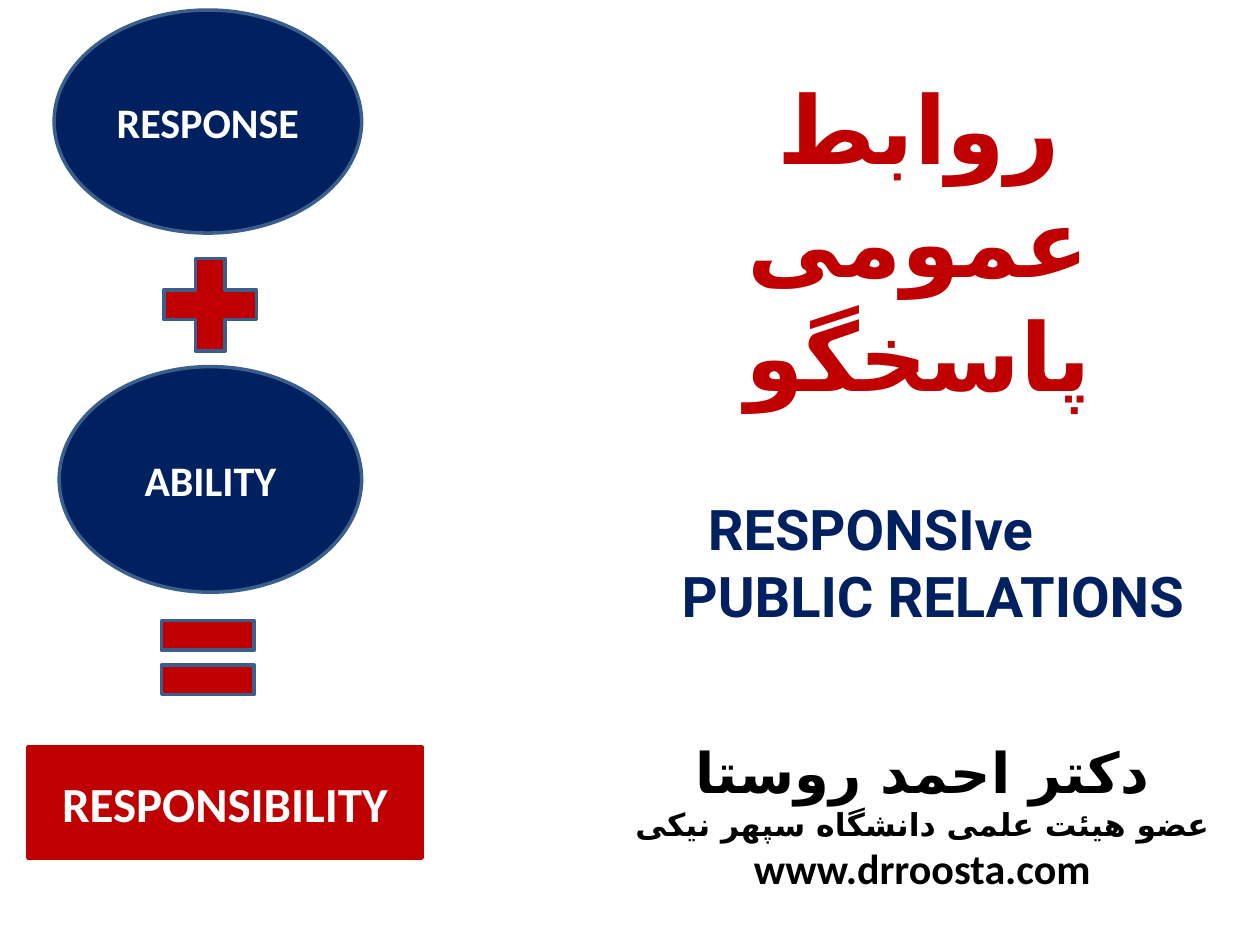
from dataclasses import dataclass

from lxml import etree
from pptx import Presentation
from pptx.dml.color import RGBColor
from pptx.enum import shapes, text
from pptx.oxml.ns import qn
from pptx.util import Inches, Pt


@dataclass(frozen=True)
class Theme:
    navy: str = "002060"
    red: str = "C00000"
    outline: str = "3A5F8C"
    white: str = "FFFFFF"
    black: str = "000000"
    body: str = "Calibri"
    persian: str = "DejaVu Sans"
    display: str = "Roboto"
    title: int = 54
    heading: int = 32
    result: int = 28
    label: int = 24
    small: int = 18


theme = Theme()


def write(s, lines, color, font=theme.body):
    """Fill a shape with bold centred lines of (text, size, right-to-left)."""
    tf = s.text_frame
    tf.word_wrap = True
    tf.vertical_anchor = text.MSO_ANCHOR.MIDDLE
    for i, (words, size, rtl) in enumerate(lines):
        p = tf.paragraphs[0] if i == 0 else tf.add_paragraph()
        p.text = words
        p.alignment = text.PP_ALIGN.CENTER
        r = p.runs[0]
        r.font.name, r.font.size, r.font.bold = font, Pt(size), True
        r.font.color.rgb = RGBColor.from_string(color)
        if rtl:
            p._p.get_or_add_pPr().set("rtl", "1")
            etree.SubElement(r.font._element, qn("a:cs")).set("typeface", theme.persian)
    return tf


prs = Presentation()
prs.slide_width, prs.slide_height = Inches(10), Inches(7.5)
slide = prs.slides.add_slide(prs.slide_layouts[6])

# Right side: title, author and English subtitle
title = slide.shapes.add_textbox(Inches(4.69), Inches(0.3), Inches(5.2), Inches(3.21))
write(title, [("روابط عمومی پاسخگو", theme.title, True)], theme.red)

author = slide.shapes.add_textbox(Inches(4.84), Inches(5.72), Inches(4.96), Inches(1.5))
write(author, [
    ("دکتر احمد روستا", theme.heading, True),
    ("عضو هیئت علمی دانشگاه سپهر نیکی", theme.small, True),
    ("www.drroosta.com", theme.label, False),
], theme.black)

subtitle = slide.shapes.add_textbox(Inches(5.16), Inches(3.28), Inches(4.49), Inches(2.36))
tf = write(subtitle, [
    ("RESPONSIve", theme.heading, False),
    ("PUBLIC RELATIONS", theme.heading, False),
], theme.navy, theme.display)
tf.paragraphs[0].alignment = text.PP_ALIGN.LEFT
tf.paragraphs[0]._p.get_or_add_pPr().set("marL", str(Inches(0.36)))

# Left side: response + ability = responsibility
kind = shapes.MSO_SHAPE
equation = [
    (kind.OVAL, 0.43, 0.08, 2.44, 1.77, theme.navy, theme.outline, "RESPONSE", theme.label),
    (kind.MATH_PLUS, 1.17, 1.92, 1, 1, theme.red, theme.outline, None, None),
    (kind.OVAL, 0.47, 2.91, 2.4, 1.79, theme.navy, theme.outline, "ABILITY", theme.label),
    (kind.MATH_EQUAL, 1.15, 4.72, 1, 1, theme.red, theme.outline, None, None),
    (kind.RECTANGLE, 0.22, 5.93, 3.13, 0.88, theme.red, theme.red, "RESPONSIBILITY", theme.result),
]
for preset, left, top, width, height, fill, line, words, size in equation:
    s = slide.shapes.add_shape(preset, Inches(left), Inches(top), Inches(width), Inches(height))
    s.shadow.inherit = False
    s.fill.solid()
    s.fill.fore_color.rgb = RGBColor.from_string(fill)
    s.line.color.rgb = RGBColor.from_string(line)
    s.line.width = Pt(2)
    if words:
        write(s, [(words, size, False)], theme.white)

prs.save("out.pptx")
